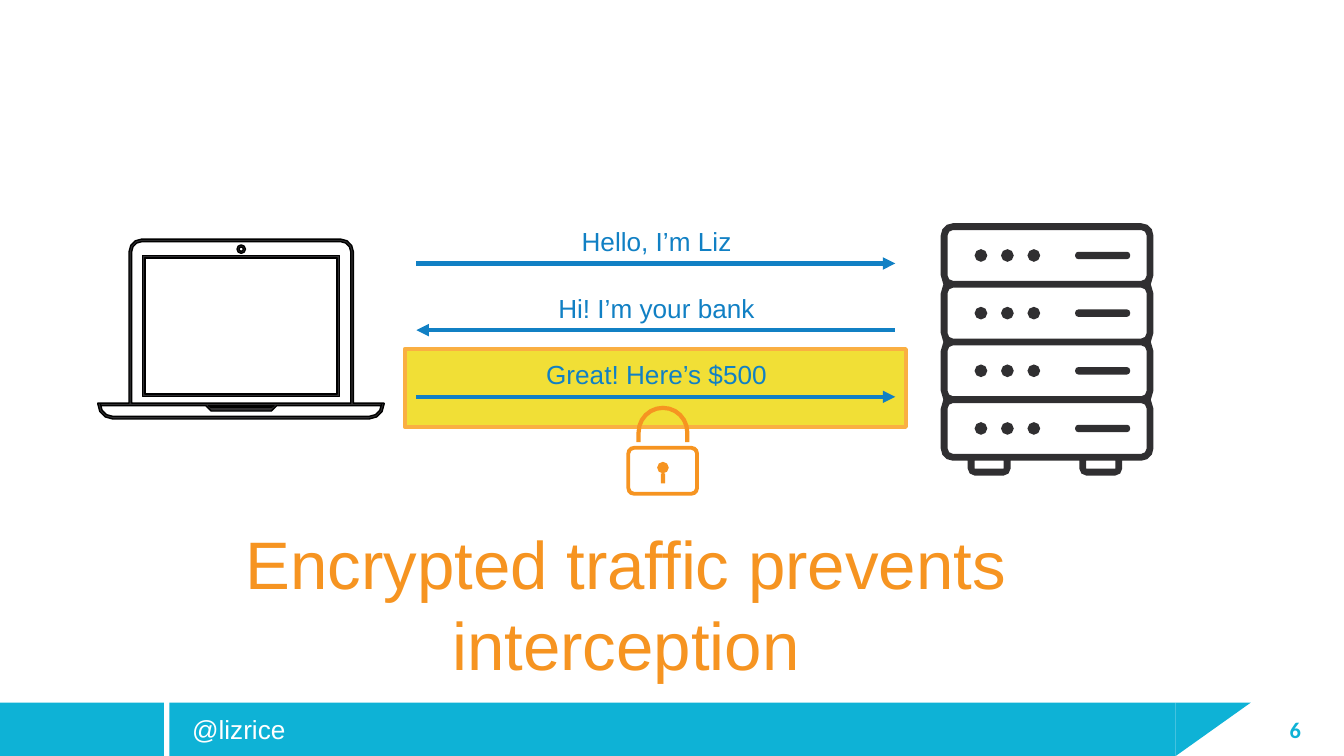
from dataclasses import dataclass
from math import cos, radians, sin

from lxml import etree
from pptx import Presentation
from pptx import util as u
from pptx.dml.color import RGBColor
from pptx.enum import shapes, text
from pptx.oxml.ns import qn

Cm = u.Cm
Points = list[tuple[float, float]]
COLORS = {
    "cyan": "0EB2D6", "blue": "1180C4", "orange": "F69421", "yellow": "F1DF36",
    "amber": "FAAF42", "ink": "302F31", "black": "000000", "white": "FFFFFF",
}


@dataclass
class Box:
    left: float
    top: float
    width: float
    height: float

    def lengths(self):
        return Cm(self.left), Cm(self.top), Cm(self.width), Cm(self.height)


@dataclass
class Message:
    words: str
    arrow_end: str  # tailEnd points right, headEnd points left


def rgb(name: str) -> RGBColor:
    return RGBColor.from_string(COLORS[name])


def paint(shape, fill: str, line: str | None = None, width: float = 0) -> None:
    shape.shadow.inherit = False
    shape.fill.solid()
    shape.fill.fore_color.rgb = rgb(fill)
    if line:
        shape.line.color.rgb = rgb(line)
        shape.line.width = u.Pt(width)
    else:
        shape.line.fill.background()


def add_block(slide, kind, box: Box, fill: str, line: str | None = None, width: float = 0):
    block = slide.shapes.add_shape(kind, *box.lengths())
    paint(block, fill, line, width)
    return block


def write(slide, words: str, box: Box, *, size: float, color: str, font: str = "Arial",
          bold: bool = False, align=text.PP_ALIGN.LEFT, anchor=text.MSO_ANCHOR.TOP,
          inset: float = 0.25, holder=None) -> None:
    holder = holder or slide.shapes.add_textbox(*box.lengths())
    holder.left, holder.top, holder.width, holder.height = box.lengths()
    frame = holder.text_frame
    frame.word_wrap = True
    frame.auto_size = text.MSO_AUTO_SIZE.NONE
    frame.vertical_anchor = anchor
    frame.margin_left = frame.margin_right = Cm(0.25)
    frame.margin_top = frame.margin_bottom = Cm(inset)
    paragraph = frame.paragraphs[0]
    paragraph.alignment = align
    run = paragraph.add_run()
    run.text = words
    run.font.name, run.font.size, run.font.bold = font, u.Pt(size), bold
    run.font.color.rgb = rgb(color)


def add_arrow(slide, left: float, right: float, y: float, arrow_end: str) -> None:
    arrow = slide.shapes.add_connector(
        shapes.MSO_CONNECTOR.STRAIGHT, Cm(left), Cm(y), Cm(right), Cm(y))
    arrow.line.color.rgb = rgb("blue")
    arrow.line.width = u.Pt(2.25)
    etree.SubElement(arrow.line._get_or_add_ln(), qn(f"a:{arrow_end}"), type="triangle")
    etree.SubElement(arrow._element.spPr, qn("a:effectLst"))


# Outline geometry, in centimetres; larger arcs get finer steps
def arc(cx: float, cy: float, radius: float, start: int, sweep: int = 90) -> Points:
    step = 15 if radius > 0.3 else 30 if radius > 0.13 else 45
    angles = [radians(start + turn) for turn in range(0, sweep + 1, step)]
    return [(cx + radius * cos(a), cy + radius * sin(a)) for a in angles]


def circle(cx: float, cy: float, radius: float) -> Points:
    return arc(cx, cy, radius, 0, 359)


def top_arcs(left: float, right: float, top: float, radius: float) -> Points:
    return (arc(left + radius, top + radius, radius, 180)
            + arc(right - radius, top + radius, radius, 270))


def bottom_arcs(left: float, right: float, bottom: float, radius: float) -> Points:
    return (arc(right - radius, bottom - radius, radius, 0)
            + arc(left + radius, bottom - radius, radius, 90))


def rounded(left: float, top: float, right: float, bottom: float, radius: float) -> Points:
    return top_arcs(left, right, top, radius) + bottom_arcs(left, right, bottom, radius)


def rectangle(left: float, top: float, right: float, bottom: float) -> Points:
    return [(left, top), (right, top), (right, bottom), (left, bottom)]


def add_outline(slide, contours: list[Points], fill: str, line: str | None = None) -> None:
    """Draw contours as one shape; a contour inside another is a hole."""
    builder = None
    for contour in contours:
        first, *rest = [(Cm(x), Cm(y)) for x, y in contour]
        if builder is None:
            builder = slide.shapes.build_freeform(*first, scale=1.0)
        else:
            builder.move_to(*first)
        builder.add_line_segments(rest, close=True)
    paint(builder.convert_to_shape(), fill, line, 0.75)


def draw_laptop(slide) -> None:
    deck, wall = 7.62, 0.05

    def lid(inset: float) -> Points:
        left, right = 2.44 + inset, 6.68 - inset
        return [(left, deck), *top_arcs(left, right, 4.52 + inset, 0.24 - inset), (right, deck)]

    def base(inset: float) -> Points:
        return bottom_arcs(1.85 + inset, 7.26 - inset, 7.92 - inset, 0.28 - inset)

    rim = deck + wall
    screen = [rectangle(2.69, 4.83, 6.42, 7.5), rectangle(2.74, 4.88, 6.37, 7.45)]
    camera = [circle(4.56, 4.71, radius) for radius in (0.08, 0.04)]
    body = [
        [(1.85, deck), *lid(0), (7.26, deck), *base(0)],
        lid(wall),
        [(1.9, rim), (3.89, rim), (3.99, 7.77), (5.13, 7.77), (5.23, rim), (7.21, rim),
         *base(wall)],
        [(3.94, rim), (5.18, rim), (5.13, 7.7), (3.99, 7.7)],
    ]
    for part in (screen, camera, body):
        add_outline(slide, part, "ink", "black")


def draw_server(slide) -> None:
    left, right, top, bottom = 17.78, 21.8, 4.22, 8.71
    pitch, wall, units = 1.09, 0.13, 4
    waists = [top + pitch * i + wall / 2 for i in range(1, units)]
    right_side = [(right - dx, y + dy) for y in waists
                  for dx, dy in ((0, -0.17), (0.05, 0), (0, 0.17))]
    left_side = [(left + right - x, y) for x, y in reversed(right_side)]
    contours = [top_arcs(left, right, top, 0.23) + right_side
                + bottom_arcs(left, right, bottom, 0.23) + left_side]
    for i in range(units):
        y = top + pitch * i
        middle = y + 0.61
        contours.append(rounded(left + wall, y + wall, right - wall, y + pitch, 0.1))
        contours.append(rounded(20.32, middle - 0.07, 21.36, middle + 0.07, 0.06))
        contours += [circle(18.54 + 0.5 * light, middle, 0.12) for light in range(3)]
    for foot in (18.29, 20.4):
        end = foot + 0.81
        contours.append([(foot, bottom), (end, bottom), *bottom_arcs(foot, end, 8.99, 0.13)])
        contours.append(rectangle(foot + wall, bottom, end - wall, 8.86))
    add_outline(slide, contours, "ink")


def draw_padlock(slide) -> None:
    def shackle(inset: float) -> Points:
        left, right = 12.03 + inset, 13.03 - inset
        return [(left, 8.36), *top_arcs(left, right, 7.67 + inset, 0.5 - inset), (right, 8.36)]

    add_outline(slide, [
        rounded(11.84, 8.43, 13.21, 9.37, 0.14),
        rounded(11.91, 8.5, 13.14, 9.3, 0.08),
        shackle(0) + shackle(0.08)[::-1],
        circle(12.53, 8.84, 0.11),
        rectangle(12.49, 8.95, 12.57, 9.14),
    ], "orange")


def main() -> None:
    deck = Presentation()
    deck.slide_width, deck.slide_height = Cm(25.4), Cm(14.29)
    slide = deck.slides.add_slide(deck.slide_layouts[5])
    kinds = shapes.MSO_SHAPE

    # Footer
    footer_top, footer_height = 13.28, 1.01
    for left, width in ((3.2, 19.02), (0, 3.1)):
        add_block(slide, kinds.RECTANGLE, Box(left, footer_top, width, footer_height), "cyan")
    corner = add_block(slide, kinds.RIGHT_TRIANGLE,
                       Box(22.22, footer_top, 1.42, footer_height), "cyan")
    corner.rotation = 180
    corner._element.spPr.xfrm.set("flipH", "1")
    write(slide, "6", Box(23.7, 13.41, 1.14, 0.76), size=12, color="cyan", font="Calibri",
          bold=True, align=text.PP_ALIGN.RIGHT, inset=0.13)
    write(slide, "@lizrice", Box(3.38, footer_top, 6.93, footer_height), size=14,
          color="white", anchor=text.MSO_ANCHOR.MIDDLE)

    # Laptop, server and the messages between them
    add_block(slide, kinds.RECTANGLE, Box(7.65, 6.6, 9.47, 1.47), "yellow", "amber", 2.25)
    draw_laptop(slide)
    draw_server(slide)
    messages = [
        Message("Hello, I’m Liz", "tailEnd"),
        Message("Hi! I’m your bank", "headEnd"),
        Message("Great! Here’s $500", "tailEnd"),
    ]
    for i, message in enumerate(messages):
        y = 4.98 + 1.26 * i
        add_arrow(slide, 7.87, 16.92, y, message.arrow_end)
        write(slide, message.words, Box(7.98, y - 0.97, 8.86, 0.89), size=14,
              color="blue", align=text.PP_ALIGN.CENTER)

    # Conclusion and padlock
    write(slide, "Encrypted traffic prevents interception", Box(1.85, 9.63, 19.96, 2.82),
          size=36, color="orange", align=text.PP_ALIGN.CENTER, holder=slide.shapes.title)
    draw_padlock(slide)

    deck.save("out.pptx")


if __name__ == "__main__":
    main()
